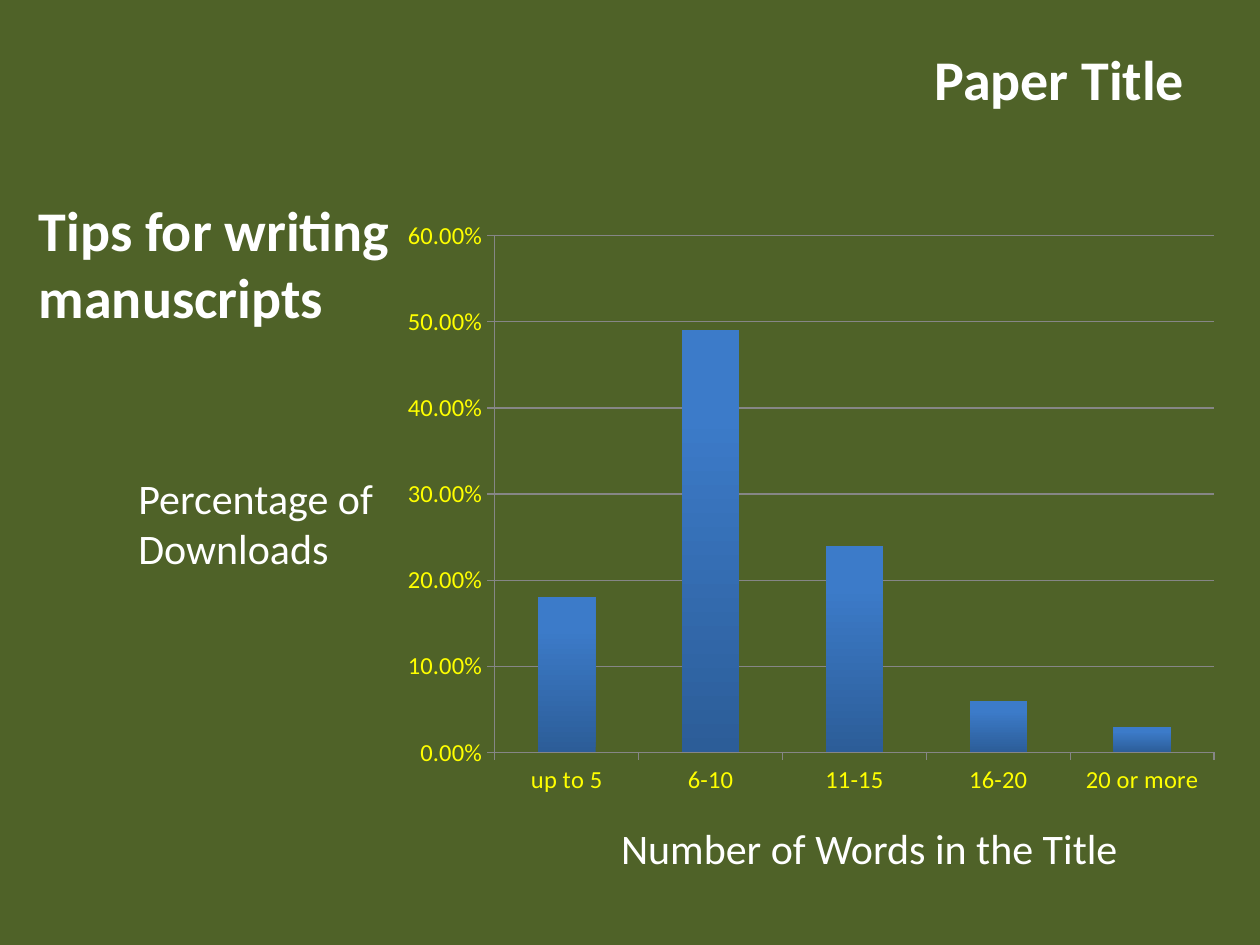
from dataclasses import dataclass

import pptx
import pptx.chart.data
import pptx.dml.color
import pptx.enum.chart
import pptx.enum.text
import pptx.oxml
import pptx.oxml.ns
import pptx.util

Pt = pptx.util.Pt
RGBColor = pptx.dml.color.RGBColor
Alignment = pptx.enum.text.PP_ALIGN
AutoSize = pptx.enum.text.MSO_AUTO_SIZE


@dataclass(frozen=True)
class Theme:
    font: str = "Calibri"
    background: RGBColor = RGBColor(0x4F, 0x62, 0x28)
    text: RGBColor = RGBColor(0xFF, 0xFF, 0xFF)
    axis_text: RGBColor = RGBColor(0xFF, 0xFF, 0x00)
    axis_line: RGBColor = RGBColor(0x86, 0x86, 0x86)
    column_bottom: RGBColor = RGBColor(0x2C, 0x5D, 0x98)
    column_top: RGBColor = RGBColor(0x3C, 0x7B, 0xC9)
    heading_size: float = 32
    label_size: float = 24
    axis_size: float = 14


@dataclass(frozen=True)
class Box:
    left: float
    top: float
    width: float
    height: float

    def lengths(self) -> tuple:
        return Pt(self.left), Pt(self.top), Pt(self.width), Pt(self.height)


@dataclass(frozen=True)
class AxisLabel:
    lines: tuple[str, ...]
    box: Box


THEME = Theme()
TITLE_BOX = Box(15, 108, 237, 65.5)
TOPIC_BOX = Box(281.5, 21.6, 402.5, 504.7)
CHART_BOX = Box(225.4, 121, 478, 343.4)
PLOT_SHARES = {"x": 0.12, "y": 0.04, "w": 0.86, "h": 0.86}
DOWNLOAD_SHARES = {
    "up to 5": 0.18,
    "6-10": 0.49,
    "11-15": 0.24,
    "16-20": 0.06,
    "20 or more": 0.03,
}
AXIS_LABELS = (
    AxisLabel(("Percentage of", "Downloads"), Box(72, 266.4, 155.5, 65.5)),
    AxisLabel(("Number of Words in the Title",), Box(347.8, 466.6, 301, 36)),
)


def write_text(text_frame, *lines: str, size: float, bold: bool = False,
               align=Alignment.LEFT, wrap: bool = True, auto_size=AutoSize.NONE) -> None:
    text_frame.word_wrap = wrap
    text_frame.auto_size = auto_size
    text_frame.vertical_anchor = pptx.enum.text.MSO_ANCHOR.TOP
    for index, line in enumerate(lines):
        paragraph = text_frame.add_paragraph() if index else text_frame.paragraphs[0]
        paragraph.alignment = align
        run = paragraph.add_run()
        run.text = line
        run.font.name = THEME.font
        run.font.size = Pt(size)
        run.font.bold = bold
        run.font.color.rgb = THEME.text


def add_title(slide) -> None:
    title = slide.shapes.title
    title.left, title.top, title.width, title.height = TITLE_BOX.lengths()
    write_text(title.text_frame, "Tips for writing manuscripts",
               size=THEME.heading_size, bold=True)


def add_axis_label(slide, label: AxisLabel) -> None:
    shape = slide.shapes.add_textbox(*label.box.lengths())
    write_text(shape.text_frame, *label.lines, size=THEME.label_size,
               wrap=False, auto_size=AutoSize.SHAPE_TO_FIT_TEXT)


def style_line(line) -> None:
    line.color.rgb = THEME.axis_line
    line.width = Pt(0.75)


def place_plot(chart) -> None:
    """Fix the inner plot area as shares of the chart's frame."""
    plot_area = chart.plots[0]._element.getparent()
    for layout in plot_area.findall(pptx.oxml.ns.qn("c:layout")):
        plot_area.remove(layout)
    settings = {"layoutTarget": "inner", "xMode": "edge", "yMode": "edge", **PLOT_SHARES}
    content = "".join(f'<c:{name} val="{value}"/>' for name, value in settings.items())
    plot_area.insert(0, pptx.oxml.parse_xml(
        f'<c:layout {pptx.oxml.ns.nsdecls("c")}>'
        f"<c:manualLayout>{content}</c:manualLayout></c:layout>"))


def add_download_chart(slide) -> None:
    data = pptx.chart.data.CategoryChartData(number_format="0.00%")
    data.categories = list(DOWNLOAD_SHARES)
    data.add_series("Series 1", list(DOWNLOAD_SHARES.values()))
    chart = slide.shapes.add_chart(
        pptx.enum.chart.XL_CHART_TYPE.COLUMN_CLUSTERED, *CHART_BOX.lengths(), data).chart
    chart.has_legend = False
    chart.has_title = False
    chart.font.name = THEME.font
    chart.font.size = Pt(THEME.axis_size)
    chart.font.color.rgb = THEME.axis_text
    place_plot(chart)

    for axis in (chart.category_axis, chart.value_axis):
        axis.major_tick_mark = pptx.enum.chart.XL_TICK_MARK.OUTSIDE
        style_line(axis.format.line)
    value_axis = chart.value_axis
    value_axis.minimum_scale = 0
    value_axis.maximum_scale = 0.6
    value_axis.major_unit = 0.1
    value_axis.tick_labels.number_format = "0.00%"
    value_axis.tick_labels.number_format_is_linked = False
    value_axis.has_major_gridlines = True
    style_line(value_axis.major_gridlines.format.line)

    plot = chart.plots[0]
    plot.gap_width = 150
    plot.vary_by_categories = False
    fill = plot.series[0].format.fill
    fill.gradient()
    fill.gradient_angle = 90
    stops = ((0, THEME.column_bottom), (0.8, THEME.column_top))
    for stop, (position, color) in zip(fill.gradient_stops, stops):
        stop.position = position
        stop.color.rgb = color


def main() -> None:
    presentation = pptx.Presentation()
    presentation.slide_width, presentation.slide_height = Pt(720), Pt(540)
    slide = presentation.slides.add_slide(presentation.slide_layouts[5])
    slide.background.fill.solid()
    slide.background.fill.fore_color.rgb = THEME.background
    add_title(slide)
    topic = slide.shapes.add_textbox(*TOPIC_BOX.lengths())
    write_text(topic.text_frame, "Paper Title", size=THEME.heading_size,
               bold=True, align=Alignment.RIGHT)
    add_download_chart(slide)
    for label in AXIS_LABELS:
        add_axis_label(slide, label)
    presentation.save("out.pptx")


if __name__ == "__main__":
    main()
